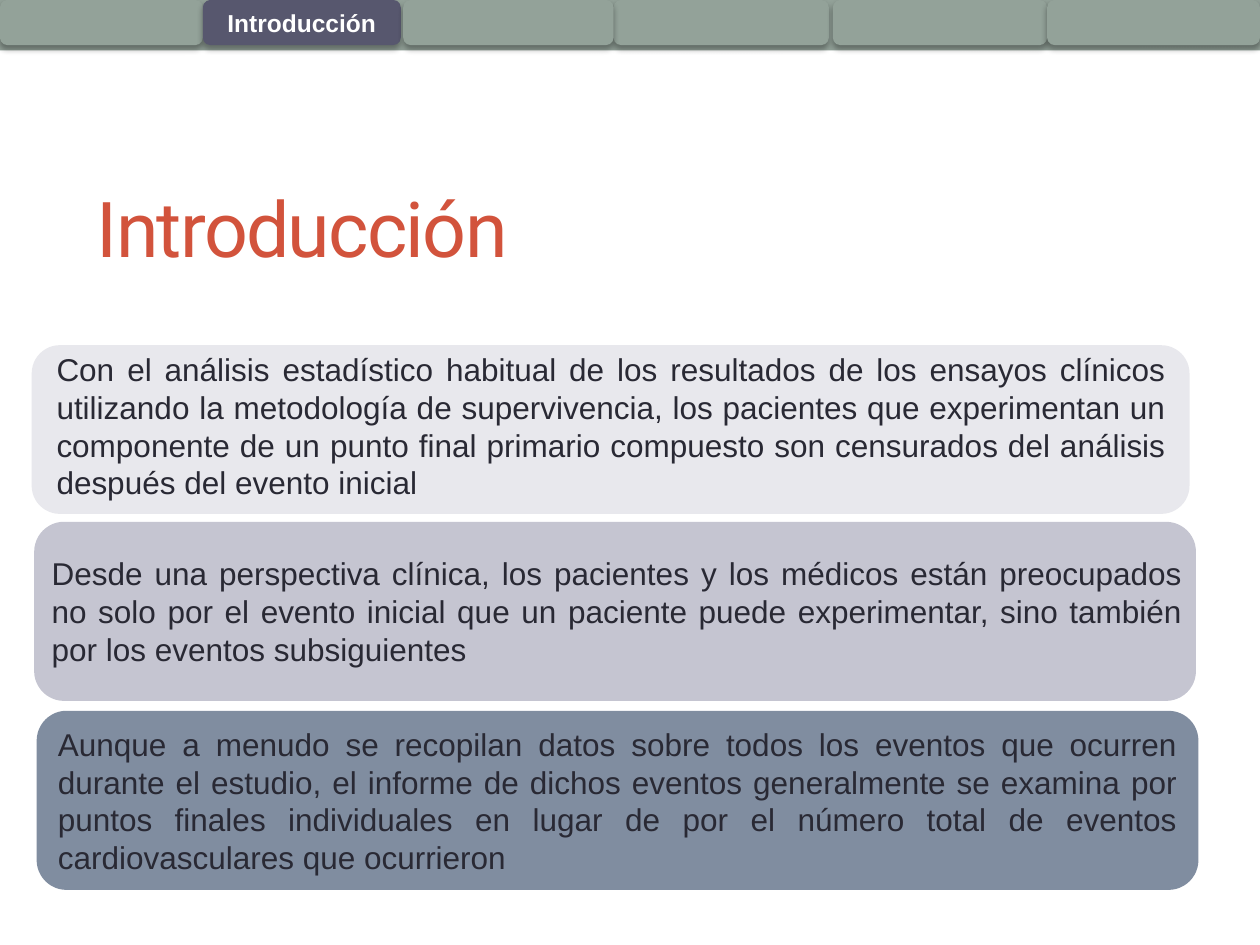
from dataclasses import dataclass

from lxml import etree
from pptx import Presentation
from pptx import util as u
from pptx.dml.color import RGBColor
from pptx.enum import shapes, text
from pptx.oxml import ns

SAGE, PLUM, INK = "93A299", "57576E", "292934"
KIND = shapes.MSO_SHAPE
LEFT, MID, JUST = text.PP_ALIGN.LEFT, text.PP_ALIGN.CENTER, text.PP_ALIGN.JUSTIFY


@dataclass
class Box:
    """A place on the slide, in centimetres."""
    x: float
    y: float
    w: float
    h: float

    def spot(self) -> tuple:
        return tuple(u.Cm(n) for n in (self.x, self.y, self.w, self.h))


@dataclass
class Tab:
    x: float
    w: float
    label: str = ""
    fill: str = SAGE


@dataclass
class Card:
    box: Box
    fill: str
    words: str
    over: Box | None = None  # separate text box, if the words are not in the card


def tint(item, code: str) -> None:
    """Colour a fill, or a font, from a hex string."""
    if hasattr(item, "solid"):
        item.solid()
        item.fore_color.rgb = RGBColor.from_string(code)
    else:
        item.color.rgb = RGBColor.from_string(code)


def write(shape, words: str, size=18, font="Arial", color=INK, bold=False,
          align=JUST, anchor=text.MSO_ANCHOR.MIDDLE, track=0) -> None:
    frame = shape.text_frame
    frame.word_wrap = True
    frame.auto_size = text.MSO_AUTO_SIZE.NONE
    frame.vertical_anchor = anchor
    para = frame.paragraphs[0]
    para.alignment = align
    run = para.add_run()
    run.text = words
    run.font.size, run.font.name, run.font.bold = u.Pt(size), font, bold
    tint(run.font, color)
    if track:
        run.font._element.set("spc", str(track * 100))


def block(slide, box: Box, fill: str, kind=KIND.ROUNDED_RECTANGLE):
    shape = slide.shapes.add_shape(kind, *box.spot())
    tint(shape.fill, fill)
    shape.line.fill.background()
    shape.shadow.inherit = False
    return shape


def shade(shape) -> None:
    """Soft black shadow straight below the shape."""
    effect = shape._element.spPr.find(ns.qn("a:effectLst"))
    outer = etree.SubElement(effect, ns.qn("a:outerShdw"), blurRad=str(u.Pt(3.5)),
                             dist=str(u.Pt(2.2)), dir="5400000", rotWithShape="0")
    color = etree.SubElement(outer, ns.qn("a:srgbClr"), val="000000")
    etree.SubElement(color, ns.qn("a:alpha"), val="32000")


def draw_tab(slide, tab: Tab) -> None:
    shape = block(slide, Box(tab.x, 0, tab.w, 0.91), tab.fill)
    shade(shape)
    if tab.label:
        write(shape, tab.label, size=14, color="FFFFFF", bold=True, align=MID)


def draw_card(slide, card: Card) -> None:
    shape = block(slide, card.box, card.fill)
    if card.over:
        shape = slide.shapes.add_textbox(*card.over.spot())
        write(shape, card.words, anchor=text.MSO_ANCHOR.TOP)
    else:
        write(shape, card.words)


TABS = [
    Tab(0, 4.09),
    Tab(4.09, 3.99, "Introducción", PLUM),
    Tab(12.37, 4.34),
    Tab(16.79, 4.32),
    Tab(21.11, 4.29),
    Tab(8.13, 4.24),
]

CARDS = [
    Card(Box(0.64, 6.96, 23.34, 3.4), "E8E8ED",
         "Con el análisis estadístico habitual de los resultados de los ensayos "
         "clínicos utilizando la metodología de supervivencia, los pacientes que "
         "experimentan un componente de un punto final primario compuesto son "
         "censurados del análisis después del evento inicial",
         Box(0.89, 6.93, 22.86, 3.33)),
    Card(Box(0.69, 10.52, 23.42, 3.61), "C5C5D1",
         "Desde una perspectiva clínica, los pacientes y los médicos están "
         "preocupados no solo por el evento inicial que un paciente puede "
         "experimentar, sino también por los eventos subsiguientes",
         Box(0.79, 11.05, 23.29, 2.57)),
    Card(Box(0.74, 14.33, 23.42, 3.61), "808DA0",
         "Aunque a menudo se recopilan datos sobre todos los eventos que ocurren "
         "durante el estudio, el informe de dichos eventos generalmente se examina "
         "por puntos finales individuales en lugar de por el número total de "
         "eventos cardiovasculares que ocurrieron"),
]


def main() -> None:
    deck = Presentation()
    deck.slide_width, deck.slide_height = u.Cm(25.4), u.Cm(19.05)
    slide = deck.slides.add_slide(deck.slide_layouts[5])

    # Title
    title = slide.shapes.title
    title.left, title.top, title.width, title.height = Box(1.7, 3.2, 11.63, 2.74).spot()
    write(title, "Introducción", size=44, font="Roboto", color="D2533C",
          align=LEFT, track=-1)

    # Navigation band and its tabs
    block(slide, Box(0, 0, 25.4, 1.02), SAGE, KIND.RECTANGLE)
    for tab in TABS:
        draw_tab(slide, tab)

    # Text cards
    for card in CARDS:
        draw_card(slide, card)

    deck.save("out.pptx")


if __name__ == "__main__":
    main()
